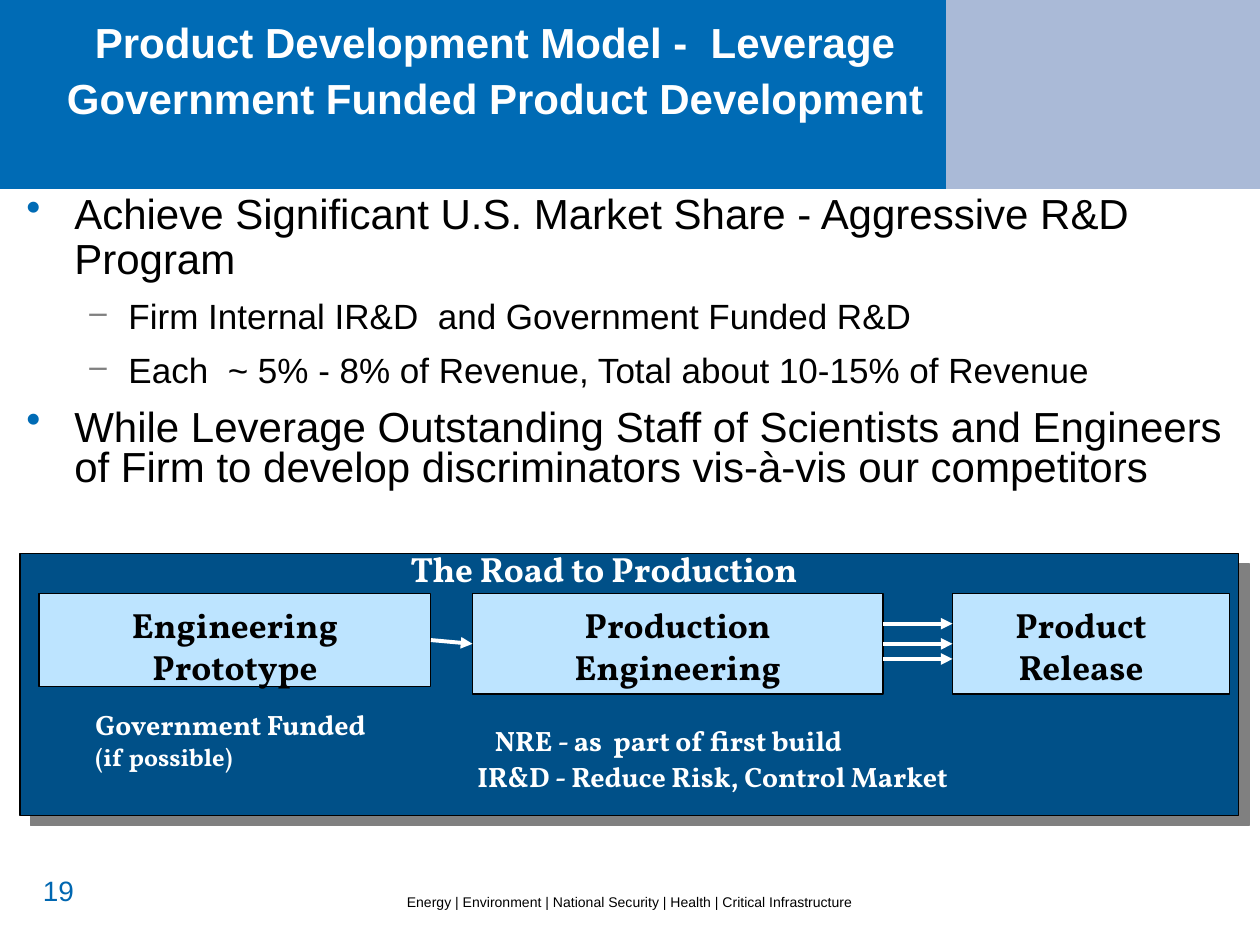
import pptx
import pptx.util
import pptx.dml.color
import pptx.enum.shapes
import pptx.enum.text
from dataclasses import dataclass
from lxml import etree
from pptx.oxml.ns import qn

Inches, Pt = pptx.util.Inches, pptx.util.Pt
ALIGN = pptx.enum.text.PP_ALIGN
ANCHOR = pptx.enum.text.MSO_ANCHOR


@dataclass(frozen=True)
class Theme:
    band: str = "006BB5"
    band_end: str = "AABAD7"
    panel: str = "005088"
    stage: str = "BDE4FF"
    shade: str = "808080"
    number: str = "0067B1"
    black: str = "000000"
    white: str = "FFFFFF"
    sans: str = "Arial"
    serif: str = "Vollkorn"
    heading: int = 24
    large: int = 20
    medium: int = 16
    small: int = 14
    footer: int = 8


THEME = Theme()


def rgb(color):
    return pptx.dml.color.RGBColor.from_string(color)


def style_run(run, size, color, face, bold=False):
    run.font.size = Pt(size)
    run.font.color.rgb = rgb(color)
    run.font.name = face
    run.font.bold = bold


def set_insets(frame, left=0, top=0, right=0, bottom=0):
    frame.margin_left, frame.margin_top = Inches(left), Inches(top)
    frame.margin_right, frame.margin_bottom = Inches(right), Inches(bottom)


def add_block(slide, place, fill, outlined=False):
    block = slide.shapes.add_shape(
        pptx.enum.shapes.MSO_SHAPE.RECTANGLE, *map(Inches, place))
    block.shadow.inherit = False
    block.fill.solid()
    block.fill.fore_color.rgb = rgb(fill)
    if outlined:
        block.line.color.rgb = rgb(THEME.black)
        block.line.width = Pt(0.75)
    else:
        block.line.fill.background()
    return block


def add_drop_shadow(block):
    effects = block._element.spPr.find(qn("a:effectLst"))
    shadow = etree.SubElement(effects, qn("a:outerShdw"), dist=str(Pt(8.5)),
                              dir="2700000", algn="ctr", rotWithShape="0")
    etree.SubElement(shadow, qn("a:srgbClr"), val=THEME.shade)


def add_label(slide, place, text, sizes, color, face, bold=False, align=ALIGN.LEFT):
    """Add a text box; sizes holds one type size for each line."""
    label = slide.shapes.add_textbox(*map(Inches, place))
    frame = label.text_frame
    frame.word_wrap = True
    paragraph = frame.paragraphs[0]
    paragraph.text = text
    paragraph.alignment = align
    for run, size in zip(paragraph.runs, sizes):
        style_run(run, size, color, face, bold)
    return frame


def set_title(slide, text):
    title = slide.shapes.title
    title.left, title.top, title.width, title.height = map(Inches, (0.5, 0, 6.86, 1.51))
    frame = title.text_frame
    frame.auto_size = pptx.enum.text.MSO_AUTO_SIZE.NONE
    frame.word_wrap = True
    frame.vertical_anchor = ANCHOR.MIDDLE
    set_insets(frame, bottom=0.44)
    frame.text = text
    paragraph = frame.paragraphs[0]
    paragraph.alignment = ALIGN.CENTER
    paragraph.line_spacing = 1.1
    style_run(paragraph.runs[0], THEME.heading, THEME.white, THEME.sans, True)
    # Bring the title in front of the band
    slide.shapes._spTree.append(title._element)


def set_bullet(paragraph, level):
    indent, hang, color, percent, mark = (
        (0.38, 0.38, THEME.band, 100, "•"),
        (0.81, 0.31, THEME.shade, 90, "–"))[level]
    paragraph.level = level
    properties = paragraph._p.get_or_add_pPr()
    properties.set("marL", str(Inches(indent)))
    properties.set("indent", str(-Inches(hang)))
    bullet_color = etree.SubElement(properties, qn("a:buClr"))
    etree.SubElement(bullet_color, qn("a:srgbClr"), val=color)
    etree.SubElement(properties, qn("a:buSzPct"), val=str(percent * 1000))
    etree.SubElement(properties, qn("a:buChar"), char=mark)


def add_bullets(slide, place, points):
    frame = slide.shapes.add_textbox(*map(Inches, place)).text_frame
    frame.word_wrap = True
    set_insets(frame)
    for index, (level, spacing, before, text) in enumerate(points):
        paragraph = frame.add_paragraph() if index else frame.paragraphs[0]
        paragraph.text = text
        set_bullet(paragraph, level)
        paragraph.line_spacing = spacing
        paragraph.space_before = Pt(before)
        style_run(paragraph.runs[0], (THEME.heading, THEME.large)[level],
                  THEME.black, THEME.sans)


def add_stage(slide, place, text, left=0.1, right=0.1):
    stage = add_block(slide, place, THEME.stage, outlined=True)
    frame = stage.text_frame
    frame.word_wrap = True
    frame.vertical_anchor = ANCHOR.TOP
    set_insets(frame, left, 0.08, right, 0.05)
    frame.text = text
    paragraph = frame.paragraphs[0]
    paragraph.alignment = ALIGN.CENTER
    for run in paragraph.runs:
        style_run(run, THEME.large, THEME.black, THEME.serif, True)
    return stage


def add_arrow(slide, source, target, y=None):
    """Join two stages at their side middles, or run level at height y."""
    height = Inches(y or 0)
    arrow = slide.shapes.add_connector(
        pptx.enum.shapes.MSO_CONNECTOR.STRAIGHT,
        source.left + source.width, height, target.left, height)
    if y is None:
        arrow.begin_connect(source, 3)
        arrow.end_connect(target, 1)
    arrow.line.color.rgb = rgb(THEME.white)
    arrow.line.width = Pt(2.25)
    etree.SubElement(arrow.line._get_or_add_ln(), qn("a:tailEnd"), type="triangle")
    etree.SubElement(arrow._element.spPr, qn("a:effectLst"))


def main():
    deck = pptx.Presentation()
    deck.slide_width, deck.slide_height = Inches(10), Inches(7.5)
    slide = deck.slides.add_slide(deck.slide_layouts[5])

    # Header band and title
    add_block(slide, (0, 0, 10, 1.5), THEME.band)
    add_block(slide, (7.51, 0, 2.49, 1.5), THEME.band_end)
    set_title(slide, "Product Development Model -  Leverage Government Funded Product Development")

    # Footer
    add_label(slide, (0, 7.04, 10, 0.1),
              "Energy | Environment | National Security | Health | Critical Infrastructure",
              [THEME.footer], THEME.black, THEME.sans, align=ALIGN.CENTER)
    page_number = add_label(slide, (0.34, 6.93, 0.39, 0.35), "19",
                            [THEME.medium], THEME.number, THEME.sans)
    set_insets(page_number)

    # Strategy: level, line spacing, space before, text
    add_bullets(slide, (0.21, 1.53, 9.79, 2.72), [
        (0, 0.9, 0, "Achieve Significant U.S. Market Share - Aggressive R&D Program"),
        (1, 0.9, 9, "Firm Internal IR&D  and Government Funded R&D"),
        (1, 0.9, 9, "Each  ~ 5% - 8% of Revenue, Total about 10-15% of Revenue"),
        (0, 0.8, 11, "While Leverage Outstanding Staff of Scientists and Engineers "
                     "of Firm to develop discriminators vis-à-vis our competitors"),
    ])

    # Road to production panel and its notes
    panel = add_block(slide, (0.16, 4.39, 9.67, 2.08), THEME.panel, outlined=True)
    add_drop_shadow(panel)
    for place, text, sizes in (
            ((3.16, 4.3, 3.67, 0.43), "The Road to Production", [THEME.large]),
            ((0.66, 5.57, 2.64, 0.6), "Government Funded\v(if possible)",
             [THEME.medium, THEME.small]),
            ((3.83, 5.69, 3.22, 0.37), "NRE - as  part of first build", [THEME.medium]),
            ((3.69, 5.98, 4.08, 0.37), "IR&D - Reduce Risk, Control Market",
             [THEME.medium])):
        add_label(slide, place, text, sizes, THEME.white, THEME.serif, bold=True)

    # Stages and the arrows between them
    prototype = add_stage(slide, (0.31, 4.71, 3.11, 0.74), "Engineering\vPrototype")
    production = add_stage(slide, (3.75, 4.71, 3.26, 0.8), "Production\vEngineering")
    release = add_stage(slide, (7.56, 4.71, 2.2, 0.8), "Product\vRelease", 0.19, 0.35)
    add_arrow(slide, prototype, production)
    add_arrow(slide, production, release)
    for y in (4.95, 5.23):
        add_arrow(slide, production, release, y)

    deck.save("out.pptx")


if __name__ == "__main__":
    main()
